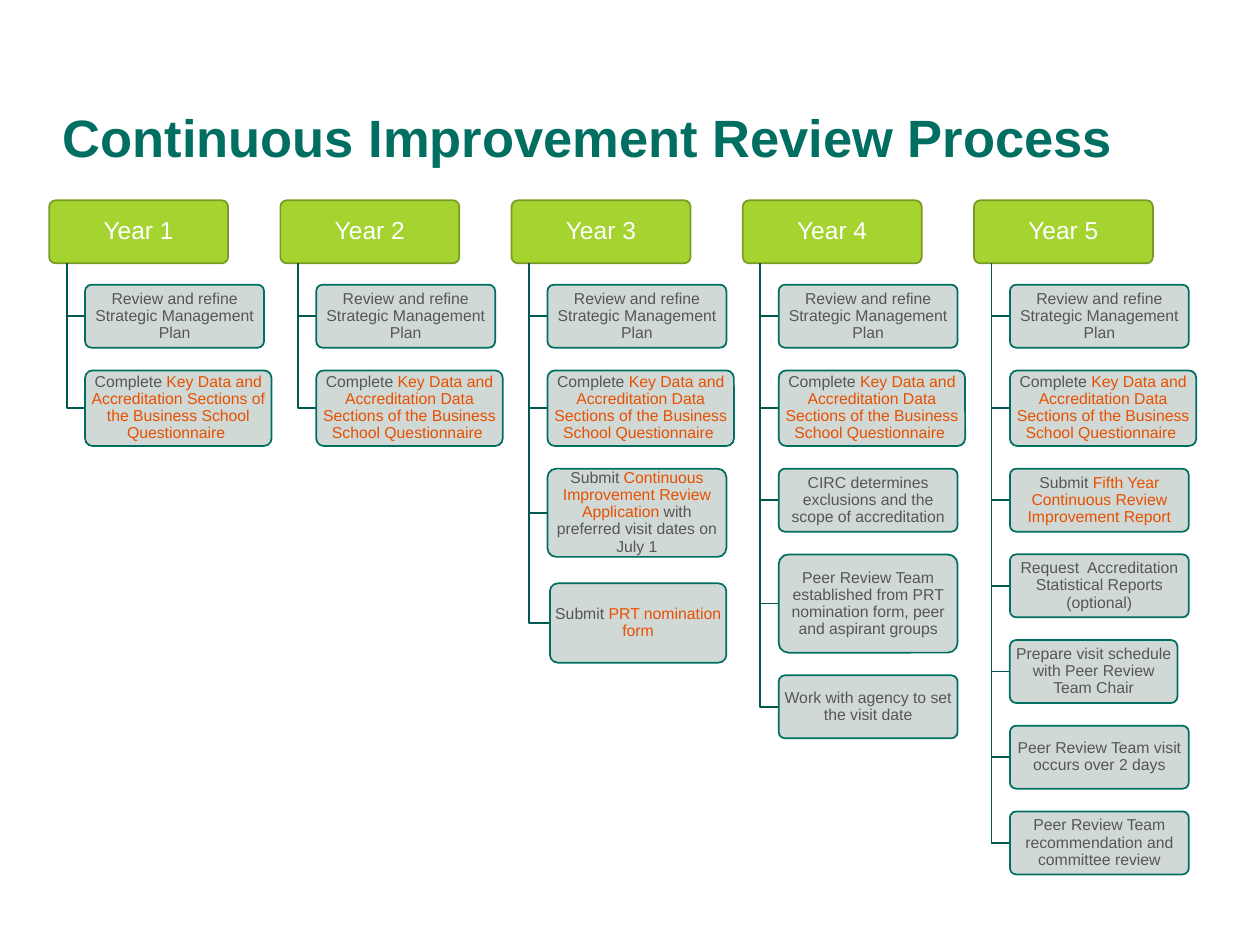
"""Build the five-year continuous improvement review process slide."""
from lxml import etree
from pptx import Presentation
from pptx.dml.color import RGBColor
from pptx.enum.shapes import MSO_SHAPE
from pptx.enum.text import MSO_ANCHOR, PP_ALIGN
from pptx.oxml.ns import qn
from pptx.util import Inches, Pt

ROUNDED = MSO_SHAPE.ROUNDED_RECTANGLE
MIDDLE, BOTTOM = MSO_ANCHOR.MIDDLE, MSO_ANCHOR.BOTTOM
CENTER = PP_ALIGN.CENTER

TEAL = RGBColor(0x00, 0x6E, 0x61)
DARK_TEAL = RGBColor(0x00, 0x58, 0x4E)
LIME = RGBColor(0xA5, 0xD3, 0x30)
OLIVE = RGBColor(0x7A, 0x9C, 0x24)
MIST = RGBColor(0xCC, 0xD5, 0xD2)
GRAY = RGBColor(0x55, 0x56, 0x59)
ORANGE = RGBColor(0xE7, 0x50, 0x00)
WHITE = RGBColor(0xFF, 0xFF, 0xFF)

FONT = "Arial"
TITLE = "Continuous Improvement Review Process"


def step(*pieces, width=1.42, height=0.5, shift=0, drop=0):
    """Describe a step whose text pieces alternate between plain and accented."""
    return {"pieces": pieces, "width": width, "height": height, "shift": shift, "drop": drop}


PLAN = step("Review and refine Strategic Management Plan")
FIRST_DATA = step("Complete ", "Key Data and Accreditation Sections of the Business "
                  "School Questionnaire ", width=1.48, height=0.6)
DATA = step("Complete ", "Key Data and Accreditation Data Sections of the Business "
            "School Questionnaire ", width=1.48, height=0.6)
YEARS = [
    ("Year 1", [PLAN, FIRST_DATA]),
    ("Year 2", [PLAN, DATA]),
    ("Year 3", [
        PLAN, DATA,
        step("Submit ", "Continuous Improvement Review Application ",
             "with preferred visit dates on July 1", height=0.7),
        step("Submit", " PRT nomination form", width=1.4, height=0.63, shift=0.02, drop=0.03),
    ]),
    ("Year 4", [
        PLAN, DATA,
        step("CIRC determines exclusions and the scope of accreditation"),
        step("Peer Review Team established from PRT nomination form, peer and aspirant groups",
             height=0.78),
        step("Work with agency to set the visit date"),
    ]),
    ("Year 5", [
        PLAN, DATA,
        step("Submit ", "Fifth Year Continuous Review Improvement Report"),
        step("Request\N{NO-BREAK SPACE} Accreditation Statistical Reports (optional)"),
        step("Prepare visit schedule with Peer Review Team Chair", width=1.33),
        step("Peer Review Team visit occurs over 2 days"),
        step("Peer Review Team recommendation and committee review"),
    ]),
]

LEFT, TOP, PITCH = 0.39, 1.59, 1.835
HEAD_WIDTH, HEAD_HEIGHT = 1.42, 0.5
TRUNK, INDENT = 0.14, 0.285
FIRST_STEP, GAP = 2.26, 0.18


def set_margins(frame, margin):
    frame.word_wrap = True
    frame.margin_left = frame.margin_right = Inches(margin)
    frame.margin_top = frame.margin_bottom = Inches(margin)


def add_box(page, left, top, width, height, pieces, size, colors, fill, line):
    box = page.shapes.add_shape(ROUNDED, Inches(left), Inches(top), Inches(width), Inches(height))
    box.shadow.inherit = False
    box.adjustments[0] = 0.1
    box.fill.solid()
    box.fill.fore_color.rgb = fill
    box.line.color.rgb = line
    box.line.width = Pt(1)
    set_margins(box.text_frame, 0.02)
    box.text_frame.vertical_anchor = MIDDLE
    para = box.text_frame.paragraphs[0]
    para.alignment = CENTER
    para.line_spacing = 0.9
    para.font.name = FONT
    para.font.size = Pt(size)
    for index, piece in enumerate(pieces):
        span = para.add_run()
        span.text = piece
        span.font.color.rgb = colors[index % 2]
    return box


def add_branch(page, trunk, top, middle, end):
    builder = page.shapes.build_freeform(Inches(trunk), Inches(top))
    corners = [(trunk, middle), (end, middle)]
    builder.add_line_segments([(Inches(x), Inches(y)) for x, y in corners], close=False)
    branch = builder.convert_to_shape()
    branch.shadow.inherit = False
    branch.fill.background()
    branch.line.color.rgb = DARK_TEAL
    branch.line.width = Pt(1)


def add_year(page, left, name, steps):
    add_box(page, left, TOP, HEAD_WIDTH, HEAD_HEIGHT, [name], 14, [WHITE], LIME, OLIVE)
    top = FIRST_STEP
    for item in steps:
        top += item["drop"]
        step_left = left + INDENT + item["shift"]
        add_branch(page, left + TRUNK, TOP + HEAD_HEIGHT, top + item["height"] / 2, step_left)
        box = add_box(page, step_left, top, item["width"], item["height"], item["pieces"],
                      9, [GRAY, ORANGE], MIST, TEAL)
        color = box.fill._xPr.find(qn("a:solidFill"))[0]
        etree.SubElement(color, qn("a:alpha")).set("val", "90000")
        top += item["height"] + GAP


def add_title(page):
    box = page.shapes.add_textbox(Inches(0.5), Inches(0), Inches(9), Inches(1.34))
    set_margins(box.text_frame, 0)
    box.text_frame.vertical_anchor = BOTTOM
    para = box.text_frame.paragraphs[0]
    para.text = TITLE
    para.line_spacing = 0.9
    para.font.name = FONT
    para.font.size = Pt(30)
    para.font.bold = True
    para.font.color.rgb = TEAL


def main():
    deck = Presentation()
    deck.slide_width, deck.slide_height = Inches(10), Inches(7.5)
    page = deck.slides.add_slide(deck.slide_layouts[6])
    for index, (name, steps) in enumerate(YEARS):
        add_year(page, LEFT + index * PITCH, name, steps)
    add_title(page)
    deck.save("out.pptx")


if __name__ == "__main__":
    main()
